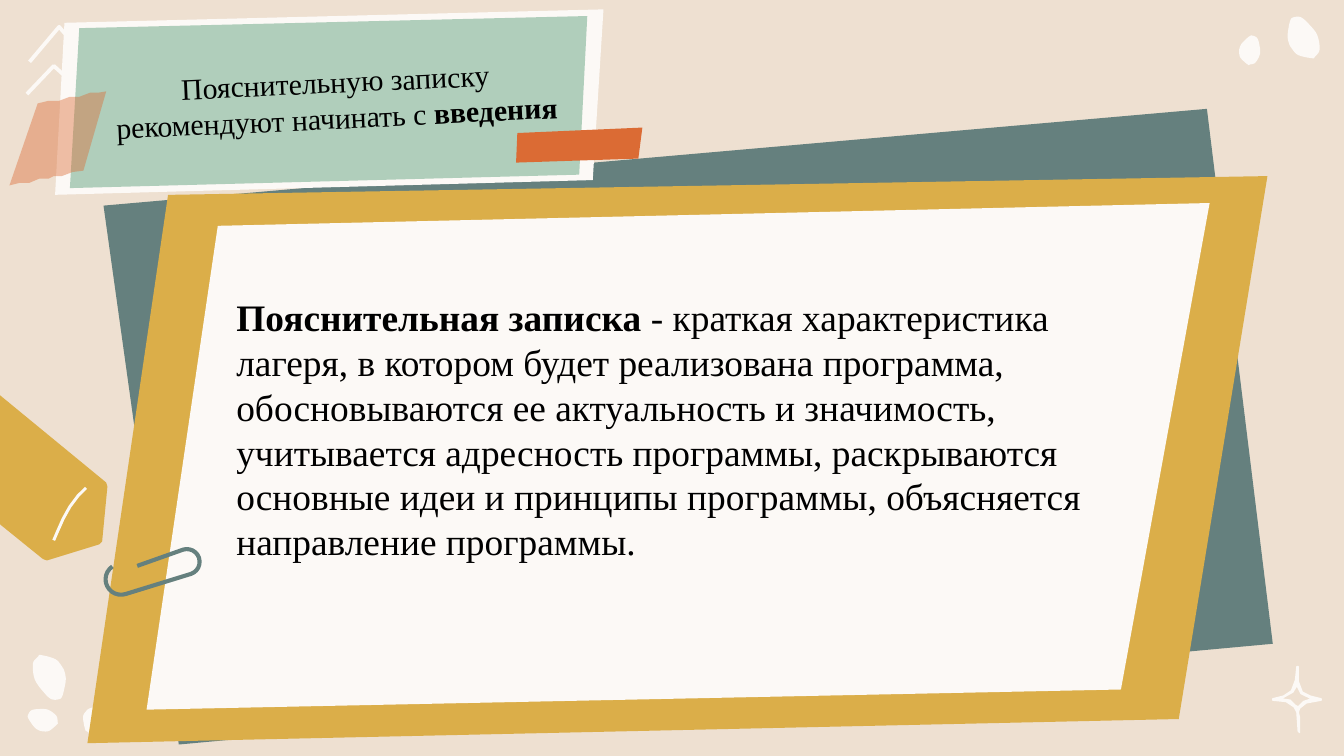
from math import cos, radians, sin

from lxml.etree import SubElement
from pptx import Presentation
from pptx.dml.color import RGBColor
from pptx.enum.text import MSO_AUTO_SIZE as AutoSize, PP_ALIGN as Align
from pptx.oxml.ns import qn
from pptx.util import Inches, Pt

COLORS = {"sand": "EEE0D1", "white": "FCF9F6", "mustard": "DBAE49", "teal": "65807E",
          "mint": "B0CEBB", "orange": "DB6B34", "black": "000000"}
FONT = "Times New Roman"
CELL = Inches(0.1)  # square grid cell: the slide is 100 columns wide and 56.25 rows high
COLUMNS, ROWS = 100, 56.25
TILT, BOARD_TILT = 357.3, 175.3

# Leaf outline in shares of its own width and height
LEAF = [(0.61, 0.02), (0.49, 0.04), (0.32, 0.14), (0.11, 0.3), (0.02, 0.44), (0, 0.56),
        (0.06, 0.77), (0.4, 1), (0.5, 1), (0.76, 0.93), (0.97, 0.63), (0.93, 0.3), (0.83, 0.1)]
# left, top, width, height, rotation
LEAVES = [(2.6, 48.6, 2.3, 3.6, 149.3), (2.3, 52.4, 1.7, 2.3, 278), (6.2, 52.4, 2.3, 2.4, 45),
          (92.2, 2.6, 1.6, 2.2, 0), (95.8, 1.1, 2.2, 3.4, 326.3)]

ZIGZAGS = [
    [(2.2, 4.6), (4.4, 2), (6.3, 4.2), (8.3, 1.9), (10.2, 4.1), (12.3, 2), (14.5, 4.2), (16.1, 2.1)],
    [(2, 7), (4, 4.9), (6.1, 6.8), (7.9, 5)],
]
SPARKLE = [
    [(96.5, 49.6), (96.4, 50.6), (96.1, 51.4), (95.5, 51.8), (94.7, 52), (94.7, 52.1), (95.7, 52.2),
     (96.3, 52.6), (96.5, 53), (96.6, 54.4), (96.7, 54.5), (96.7, 53.4), (96.6, 53), (96.7, 52.7),
     (97.2, 52.3), (98.3, 52.1), (98.3, 52), (97.5, 51.8), (96.9, 51.5), (96.6, 50.7), (96.6, 49.6)],
    [(96.5, 51), (96.8, 51.6), (97.6, 52), (97, 52.2), (96.6, 52.6), (96.4, 52.5), (96, 52.1),
     (95.3, 52), (96.2, 51.5)],
]
PENCIL = [(-5.3, 34.4), (-5.2, 34.8), (3.2, 41.6), (3.5, 41.7), (7.4, 40.5), (7.6, 40.3), (8, 36.2),
          (7.9, 35.9), (-0.5, 29), (-1.1, 29.1), (-5.2, 34.3)]
PENCIL_SHINE = [(4, 40.2), (4.3, 39.5), (4.7, 38.6), (5.2, 37.7), (5.8, 36.9), (6.4, 36.3)]
BOARD = [
    ("teal", [(13.3, 55.4), (94.7, 47.9), (89.8, 8.1), (7.7, 15.3)]),
    ("mustard", [(87.7, 53.5), (94.3, 13.1), (12.5, 14.5), (6.5, 55.3)]),
    ("white", [(83.4, 51.3), (90, 15.1), (16.2, 16.8), (10.9, 52.8)]),
]
TITLE_CARD = [
    ("white", [(4.8, 1.7), (4.1, 14.5), (44.1, 13.4), (44.9, 0.7)]),
    ("mint", [(5.9, 2.1), (5.2, 14), (43.1, 13), (43.7, 1.2)]),
    ("orange", [(38.5, 9.9), (38.4, 12.1), (47.5, 11.8), (47.8, 9.5)]),
]
TAPE = [(6.2, 12.7), (7.9, 6.8), (7.3, 6.9), (6.7, 6.9), (5.9, 7.2), (5.2, 7.2), (4.4, 7.5),
        (3.6, 7.5), (2.8, 7.7), (0.7, 13.8), (1.5, 13.6), (2.2, 13.6), (2.9, 13.3), (3.6, 13.3),
        (4, 13.1), (4.6, 13.1), (5.4, 12.8)]

TITLE = [("Пояснительную записку рекомендуют начинать с ", False), ("введения", True)]
BODY = [
    ("Пояснительная записка ", True),
    ("- краткая характеристика лагеря, в котором будет реализована программа, "
     "обосновываются ее актуальность и значимость, учитывается адресность программы, "
     "раскрываются основные идеи и принципы программы, объясняется направление программы.", False),
]


def turn(point, angle):
    """Rotate a point clockwise about the grid's origin."""
    x, y = point
    c, s = cos(radians(angle)), sin(radians(angle))
    return x * c - y * s, x * s + y * c


def arc(x, y, radius, start, end, steps=12):
    angles = [radians(start + (end - start) * i / steps) for i in range(steps + 1)]
    return [(x + radius * cos(a), y + radius * sin(a)) for a in angles]


def smooth(points, steps=5):
    """Closed Catmull-Rom curve through the points."""
    count, curve = len(points), []
    for i in range(count):
        knots = [points[(i + k) % count] for k in (-1, 0, 1, 2)]
        for t in (step / steps for step in range(steps)):
            curve.append(tuple(
                b + t * (c - a + t * (2 * a - 5 * b + 4 * c - d + t * (3 * b - a - 3 * c + d))) / 2
                for a, b, c, d in zip(*knots)))
    return curve


class Board:
    """Draws on one slide in grid cells."""

    def __init__(self, slide):
        self.slide = slide

    def color(self, name):
        return RGBColor.from_string(COLORS[name])

    def background(self, name):
        fill = self.slide.background.fill
        fill.solid()
        fill.fore_color.rgb = self.color(name)

    def outline(self, contours, rotation=0, fill=None, line=None, width=0.75):
        """Freeform whose points are given as seen after the rotation."""
        contours = [[tuple(round(v * CELL) for v in turn(point, -rotation)) for point in contour]
                    for contour in contours]
        builder = self.slide.shapes.build_freeform(*contours[0][0])
        for index, contour in enumerate(contours):
            if index:
                builder.move_to(*contour[0])
            builder.add_line_segments(contour[1:], close=fill is not None)
        shape = builder.convert_to_shape()
        x, y = turn((shape.left + shape.width / 2, shape.top + shape.height / 2), rotation)
        shape.left, shape.top = round(x - shape.width / 2), round(y - shape.height / 2)
        shape.rotation = rotation
        shape.shadow.inherit = False
        if fill:
            shape.fill.solid()
            shape.fill.fore_color.rgb = self.color(fill)
        else:
            shape.fill.background()
        if line:
            shape.line.color.rgb = self.color(line)
            shape.line.width = Pt(width)
        else:
            shape.line.fill.background()
        return shape

    def leaf(self, left, top, width, height, rotation):
        center = turn((left + width / 2, top + height / 2), -rotation)
        points = [(center[0] + (x - 0.5) * width, center[1] + (y - 0.5) * height)
                  for x, y in smooth(LEAF)]
        self.outline([[turn(point, rotation) for point in points]], rotation, "white")

    def tape(self, points, rotation, opacity):
        shape = self.outline([points], rotation, "orange")
        color = shape.fill._xPr.find(qn("a:solidFill"))[0]
        SubElement(color, qn("a:alpha"), val=str(opacity * 1000))

    def text(self, box, runs, size, align=Align.LEFT, rotation=0):
        shape = self.slide.shapes.add_textbox(*(round(v * CELL) for v in box))
        shape.rotation = rotation
        frame = shape.text_frame
        frame.word_wrap = True
        frame.auto_size = AutoSize.SHAPE_TO_FIT_TEXT
        paragraph = frame.paragraphs[0]
        paragraph.alignment = align
        paragraph.font.name, paragraph.font.size = FONT, Pt(size)
        paragraph.font.color.rgb = self.color("black")
        for words, bold in runs:
            run = paragraph.add_run()
            run.text, run.font.bold = words, bold


def main():
    presentation = Presentation()
    presentation.slide_width, presentation.slide_height = COLUMNS * CELL, round(ROWS * CELL)
    board = Board(presentation.slides.add_slide(presentation.slide_layouts[6]))
    board.background("sand")
    for leaf in LEAVES:
        board.leaf(*leaf)
    for zigzag in ZIGZAGS:
        board.outline([zigzag], line="white", width=2)
    board.outline(SPARKLE, fill="white", line="white")
    board.outline([PENCIL], 293.1, "mustard")
    board.outline([PENCIL_SHINE], 293.1, line="white", width=1.6)

    for fill, points in BOARD:
        board.outline([points], BOARD_TILT, fill)
    clip = arc(9, 43.1, 1.15, 236, 72) + arc(13.9, 41.8, 0.95, 72, -108) + [(10.2, 42.1)]
    board.outline([clip], BOARD_TILT, line="teal", width=2.2)

    for fill, points in TITLE_CARD:
        board.outline([points], TILT, fill)
    board.tape(TAPE, 162.4, 42)

    board.text((6.7, 4.2, 36.6, 6.4), TITLE, 16, Align.CENTER, TILT)
    board.text((16.6, 21.4, 69.2, 21.2), BODY, 20)
    presentation.save("out.pptx")


if __name__ == "__main__":
    main()
